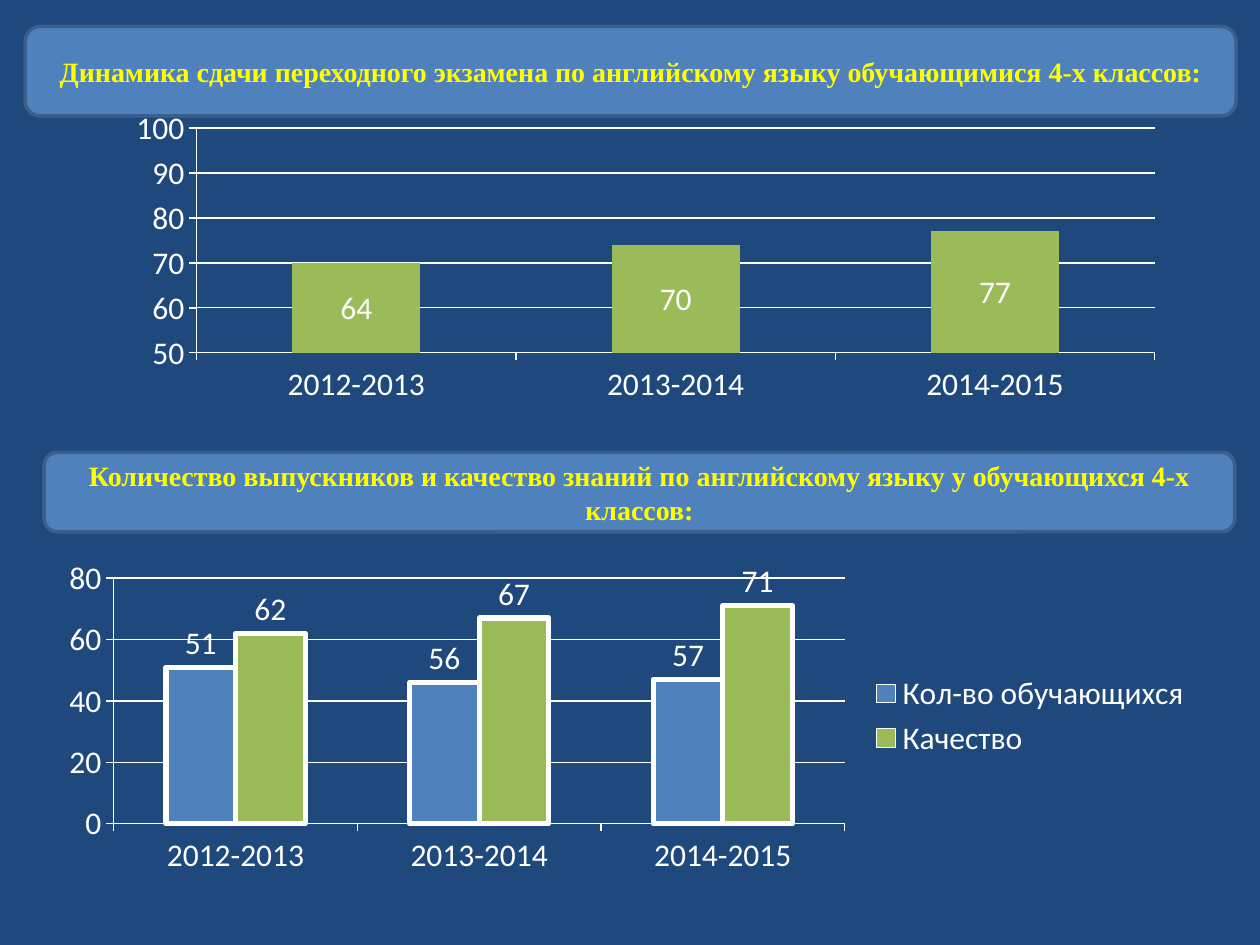
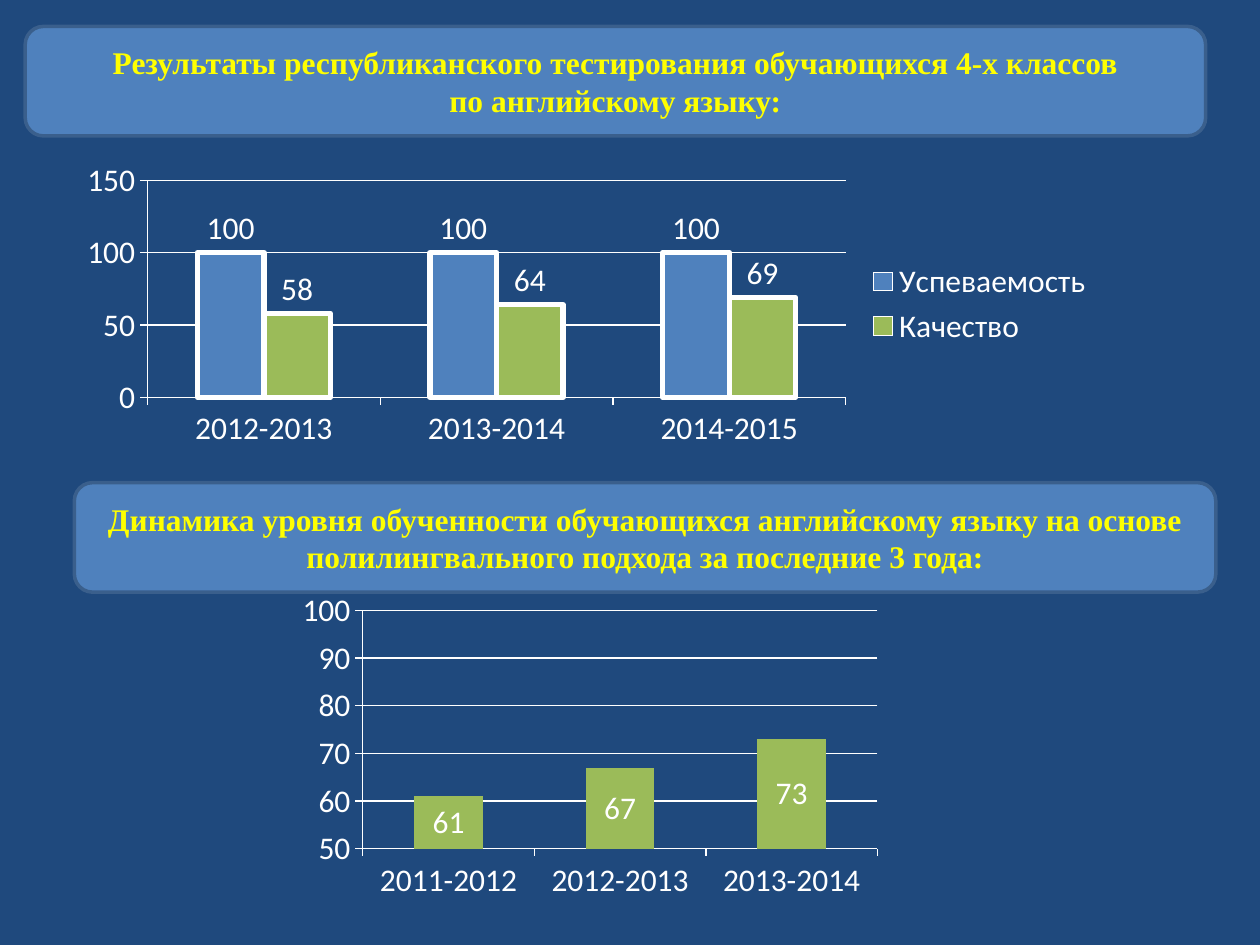
from dataclasses import dataclass, field
from typing import Any

from lxml import etree
from pptx import Presentation
from pptx.chart.data import CategoryChartData
from pptx.dml.color import RGBColor
from pptx.enum.chart import (XL_CHART_TYPE, XL_LABEL_POSITION,
                             XL_LEGEND_POSITION, XL_TICK_LABEL_POSITION,
                             XL_TICK_MARK)
from pptx.enum.shapes import MSO_SHAPE
from pptx.enum.text import MSO_ANCHOR, PP_ALIGN
from pptx.util import Pt

ROUND = MSO_SHAPE.ROUNDED_RECTANGLE
MIDDLE, CENTER = MSO_ANCHOR.MIDDLE, PP_ALIGN.CENTER
STACKED, PAIRED = XL_CHART_TYPE.COLUMN_STACKED, XL_CHART_TYPE.COLUMN_CLUSTERED
INSIDE, ABOVE = XL_LABEL_POSITION.CENTER, XL_LABEL_POSITION.OUTSIDE_END
RIGHT, LOW, TICK = XL_LEGEND_POSITION.RIGHT, XL_TICK_LABEL_POSITION.LOW, XL_TICK_MARK.OUTSIDE

NAVY, BLUE, EDGE = "1F497D", "4F81BD", "3A5F8C"
GREEN, WHITE, YELLOW = "9BBB59", "FFFFFF", "FFFF00"
BODY = {"name": "Calibri", "size": Pt(18)}
HEAD = {"name": "Times New Roman", "bold": True}
RANGE = {"minimum_scale": 50, "maximum_scale": 100, "major_unit": 10}

Box = tuple[float, float, float, float]


@dataclass
class Banner:
    box: Box
    size: int
    lines: list[str]


@dataclass
class Series:
    name: str
    vals: list[int]
    color: str
    marks: dict[int, str] = field(default_factory=dict)  # labels unlike the value


@dataclass
class Graph:
    box: Box
    plot: Box  # share of the chart area
    cats: list[str]
    series: list[Series]

    @property
    def single(self) -> bool:
        return len(self.series) == 1


def rgb(code: str) -> RGBColor:
    return RGBColor.from_string(code)


def put(item: Any, vals: dict[str, Any]) -> None:
    for key, val in vals.items():
        setattr(item, key, val)


def paint(fill: Any, code: str) -> None:
    fill.solid()
    fill.fore_color.rgb = rgb(code)


def stroke(line: Any, code: str, width: float) -> None:
    paint(line.fill, code)
    line.width = Pt(width)


def style(font: Any, vals: dict[str, Any], code: str) -> None:
    put(font, vals)
    font.color.rgb = rgb(code)


def place(chart: Any, plot: Box) -> None:
    """Fix the inner plot area inside the chart."""
    area = chart._chartSpace.chart.plotArea
    space = area.nsmap["c"]
    for old in area.findall(f"{{{space}}}layout"):
        area.remove(old)
    outer = etree.Element(f"{{{space}}}layout")
    inner = etree.SubElement(outer, f"{{{space}}}manualLayout")
    rules = [("layoutTarget", "inner"), ("xMode", "edge"), ("yMode", "edge")]
    for tag, val in rules + list(zip("xywh", plot)):
        etree.SubElement(inner, f"{{{space}}}{tag}").set("val", str(val))
    area.insert(0, outer)


def add_banner(slide: Any, banner: Banner) -> None:
    shape = slide.shapes.add_shape(ROUND, *map(Pt, banner.box))
    shape.shadow.inherit = False
    paint(shape.fill, BLUE)
    stroke(shape.line, EDGE, 2)
    frame = shape.text_frame
    put(frame, {"word_wrap": True, "vertical_anchor": MIDDLE})
    for i, line in enumerate(banner.lines):
        para = frame.add_paragraph() if i else frame.paragraphs[0]
        para.alignment = CENTER
        run = para.add_run()
        run.text = line
        style(run.font, HEAD | {"size": Pt(banner.size)}, YELLOW)


def add_bars(bars: Any, series: Series, spot: Any, framed: bool) -> None:
    paint(bars.format.fill, series.color)
    if framed:
        stroke(bars.format.line, WHITE, 3)
    labels = bars.data_labels
    put(labels, {"show_value": True, "position": spot})
    style(labels.font, BODY, WHITE)
    for i, text in series.marks.items():
        label = bars.points[i].data_label
        run = label.text_frame.paragraphs[0].add_run()
        run.text = text
        style(run.font, BODY, WHITE)
        label.position = spot


def add_graph(slide: Any, graph: Graph) -> None:
    data = CategoryChartData(number_format="0")
    data.categories = graph.cats
    for series in graph.series:
        data.add_series(series.name, series.vals)
    kind = STACKED if graph.single else PAIRED
    chart = slide.shapes.add_chart(kind, *map(Pt, graph.box), data).chart
    put(chart, {"has_title": False, "has_legend": not graph.single})
    style(chart.font, BODY, WHITE)
    if chart.has_legend:
        put(chart.legend, {"position": RIGHT, "include_in_layout": False})

    # Axes and grid
    for axis in (chart.category_axis, chart.value_axis):
        axis.major_tick_mark = TICK
        stroke(axis.format.line, WHITE, 0.75)
    chart.value_axis.has_major_gridlines = True
    stroke(chart.value_axis.major_gridlines.format.line, WHITE, 0.75)
    if graph.single:
        chart.category_axis.tick_label_position = LOW
        put(chart.value_axis, RANGE)

    # Columns
    plot = chart.plots[0]
    put(plot, {"gap_width": 150, "overlap": 100 if graph.single else 0,
               "vary_by_categories": False})
    spot = INSIDE if graph.single else ABOVE
    for bars, series in zip(plot.series, graph.series):
        add_bars(bars, series, spot, not graph.single)
    place(chart, graph.plot)


def years(first: int) -> list[str]:
    return [f"{y}-{y + 1}" for y in range(first, first + 3)]


# Each slide: charts at the back, banners in front
SLIDES: list[list[Graph | Banner]] = [
    [
        Graph((48.2, 25.9, 612, 209.5), (0.105, 0.226, 0.895, 0.613), years(2012),
              [Series("Series 1", [70, 74, 77], GREEN, {0: "64", 1: "70"})]),
        Graph((25.2, 315.4, 663.1, 187.2), (0.06, 0.08, 0.63, 0.75), years(2012),
              [Series("Кол-во обучающихся", [51, 46, 47], BLUE, {1: "56", 2: "57"}),
               Series("Качество", [62, 67, 71], GREEN)]),
        Banner((14.4, 15.1, 691.9, 51.1), 16,
               ["Динамика сдачи переходного экзамена по английскому языку "
                "обучающимися 4-х классов:"]),
        Banner((25.2, 258.5, 680.4, 45.4), 16,
               ["Количество выпускников и качество знаний по английскому языку "
                "у обучающихся 4-х классов:"]),
    ],
    [
        Graph((36.7, 88.6, 595.4, 169.9), (0.08, 0.085, 0.67, 0.73), years(2012),
              [Series("Успеваемость", [100, 100, 100], BLUE),
               Series("Качество", [58, 64, 69], GREEN)]),
        Graph((172.8, 332.6, 329, 187.2), (0.105, 0.087, 0.895, 0.727), years(2011),
              [Series("Series 1", [61, 67, 73], GREEN)]),
        Banner((14.4, 15.1, 674.6, 62.6), 18,
               ["Результаты республиканского тестирования обучающихся 4-х классов",
                "по английскому языку:"]),
        Banner((42.5, 275.8, 652.3, 62.6), 18,
               ["Динамика уровня обученности обучающихся английскому языку на основе "
                "полилингвального подхода за последние 3 года:"]),
    ],
]


def main() -> None:
    deck = Presentation()
    put(deck, {"slide_width": Pt(720), "slide_height": Pt(540)})
    for parts in SLIDES:
        slide = deck.slides.add_slide(deck.slide_layouts[6])
        paint(slide.background.fill, NAVY)
        for part in parts:
            if isinstance(part, Graph):
                add_graph(slide, part)
            else:
                add_banner(slide, part)
    deck.save("out.pptx")


if __name__ == "__main__":
    main()
